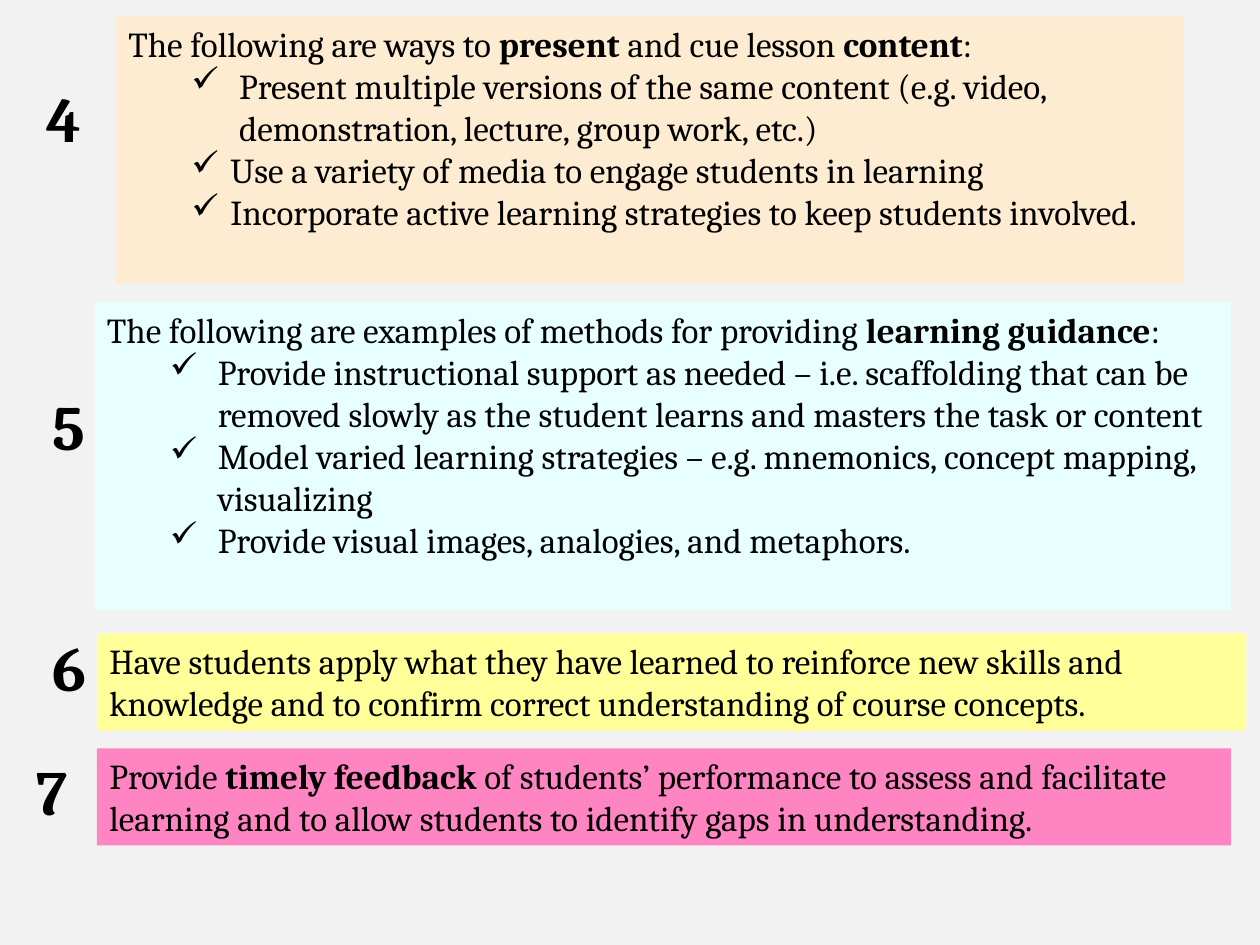
from lxml import etree
from pptx import Presentation
from pptx.dml.color import RGBColor
from pptx.enum import shapes, text
from pptx.oxml import ns
from pptx.util import Inches, Pt

COLORS = {
    "page": "F2F2F2", "ink": "000000", "present": "FDECD2",
    "guidance": "E7FFFF", "practice": "FFFF99", "feedback": "FF85C2",
}
FONT = "Cambria"
WIDE, NARROW = (0.88, -0.38), (0.81, -0.31)
NUMBER_SIZE = (0.73, 0.71)

STEPS = [
    {"number": "4", "number_at": (0.27, 0.58), "fill": "present",
     "panel": (0.92, 0.13, 8.47, 2.12),
     "lead": "The following are ways to **present** and cue lesson **content**:",
     "bullets": [
         (WIDE, "Present multiple versions of the same content (e.g. video, "
                "demonstration, lecture, group work, etc.)"),
         (NARROW, "Use a variety of media to engage students in learning"),
         (NARROW, "Incorporate active learning strategies to keep students involved."),
     ]},
    {"number": "5", "number_at": (0.32, 3.03), "fill": "guidance",
     "panel": (0.75, 2.4, 9.02, 2.44),
     "lead": "The following are examples of methods for providing **learning guidance**:",
     "bullets": [
         (WIDE, "Provide instructional support as needed – i.e. scaffolding that can be "
                "removed slowly as the student learns and masters the task or content"),
         (WIDE, "Model varied learning strategies – e.g. mnemonics, concept mapping, "
                "visualizing"),
         (WIDE, "Provide visual images, analogies, and metaphors."),
     ]},
    {"number": "6", "number_at": (0.32, 4.94), "fill": "practice",
     "panel": (0.77, 5.03, 9.12, 0.77),
     "lead": "Have students apply what they have learned to reinforce new skills and "
             "knowledge and to confirm correct understanding of course concepts.",
     "bullets": []},
    {"number": "7", "number_at": (0.19, 5.92), "fill": "feedback",
     "panel": (0.77, 5.94, 9, 0.77),
     "lead": "Provide **timely feedback **of students’ performance to assess and "
             "facilitate learning and to allow students to identify gaps in understanding.",
     "bullets": []},
]


def color(name):
    return RGBColor.from_string(COLORS[name])


def write(para, words, size):
    para.alignment = text.PP_ALIGN.LEFT
    for index, part in enumerate(words.split("**")):
        if part:
            span = para.add_run()
            span.text = part
            formats = {"name": FONT, "size": Pt(size), "bold": index % 2 == 1}
            for key, value in formats.items():
                setattr(span.font, key, value)
            span.font.color.rgb = color("ink")


def add_check(para, indent):
    para.level = 1
    props = para._p.get_or_add_pPr()
    for key, value in zip(("marL", "indent"), indent):
        props.set(key, str(int(Inches(value))))
    etree.SubElement(props, ns.qn("a:buChar")).set("char", "✓")


def set_frame(frame):
    formats = {"word_wrap": True, "vertical_anchor": text.MSO_ANCHOR.TOP,
               "auto_size": text.MSO_AUTO_SIZE.NONE}
    for key, value in formats.items():
        setattr(frame, key, value)


def add_panel(page, step):
    panel = page.shapes.add_shape(shapes.MSO_SHAPE.RECTANGLE,
                                  *map(Inches, step["panel"]))
    panel.shadow.inherit = False
    panel.fill.solid()
    panel.fill.fore_color.rgb = color(step["fill"])
    panel.line.fill.background()
    frame = panel.text_frame
    set_frame(frame)
    write(frame.paragraphs[0], step["lead"], 20)
    for indent, words in step["bullets"]:
        para = frame.add_paragraph()
        add_check(para, indent)
        write(para, words, 20)


def add_number(page, step):
    box = page.shapes.add_textbox(*map(Inches, step["number_at"] + NUMBER_SIZE))
    set_frame(box.text_frame)
    write(box.text_frame.paragraphs[0], f"**{step['number']}**", 36)


def main():
    deck = Presentation()
    deck.slide_width, deck.slide_height = Inches(10), Inches(7.5)
    page = deck.slides.add_slide(deck.slide_layouts.get_by_name("Blank"))
    page.background.fill.solid()
    page.background.fill.fore_color.rgb = color("page")
    for step in STEPS:
        add_panel(page, step)
        add_number(page, step)
    deck.save("out.pptx")


if __name__ == "__main__":
    main()
